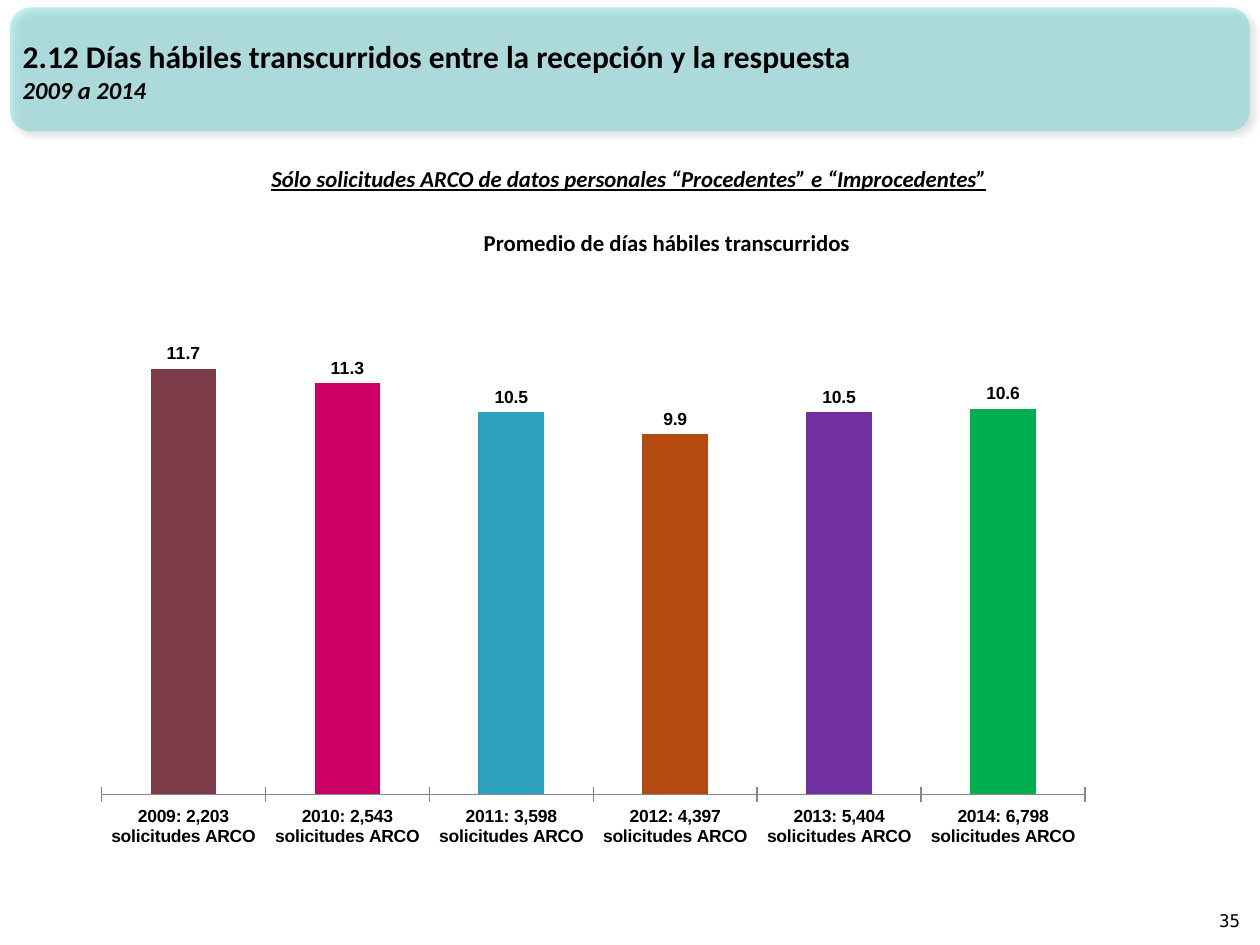
from dataclasses import dataclass

from lxml import etree
from pptx import Presentation
from pptx.chart.data import CategoryChartData
from pptx.dml.color import RGBColor
from pptx.enum.chart import XL_CHART_TYPE, XL_LABEL_POSITION, XL_TICK_LABEL_POSITION, XL_TICK_MARK
from pptx.enum.shapes import MSO_SHAPE
from pptx.enum.text import MSO_ANCHOR, PP_ALIGN
from pptx.oxml import parse_xml
from pptx.oxml.ns import nsdecls, qn
from pptx.util import Inches, Pt

COLUMN_CLUSTERED = XL_CHART_TYPE.COLUMN_CLUSTERED
OUTSIDE_END = XL_LABEL_POSITION.OUTSIDE_END
LOW_LABELS = XL_TICK_LABEL_POSITION.LOW
TICK_CROSS, TICK_NONE = XL_TICK_MARK.CROSS, XL_TICK_MARK.NONE
ROUNDED = MSO_SHAPE.ROUNDED_RECTANGLE
TOP, MIDDLE, BOTTOM = MSO_ANCHOR.TOP, MSO_ANCHOR.MIDDLE, MSO_ANCHOR.BOTTOM
LEFT, CENTER, RIGHT = PP_ALIGN.LEFT, PP_ALIGN.CENTER, PP_ALIGN.RIGHT

BLACK = RGBColor(0x00, 0x00, 0x00)
TEAL = RGBColor(0x33, 0xCC, 0xCC)
AXIS_GRAY = RGBColor(0x86, 0x86, 0x86)
BLUE = RGBColor(0x2D, 0xA2, 0xBF)

SLIDE_WIDTH, SLIDE_HEIGHT = Inches(10), Inches(7.5)
TITLE_LAYOUT = 5


@dataclass(frozen=True)
class Area:
    left: float
    top: float
    width: float
    height: float

    def box(self) -> tuple[int, int, int, int]:
        return (int(self.left * SLIDE_WIDTH), int(self.top * SLIDE_HEIGHT),
                int(self.width * SLIDE_WIDTH), int(self.height * SLIDE_HEIGHT))


@dataclass(frozen=True)
class Line:
    text: str
    size: float
    font: str = "Calibri"
    bold: bool = True
    italic: bool = False
    underline: bool = False


@dataclass(frozen=True)
class Year:
    year: int
    requests: int
    days: float
    color: RGBColor

    def label(self) -> str:
        return f"{self.year}: {self.requests:,} solicitudes ARCO"


@dataclass(frozen=True)
class Caption:
    area: Area
    line: Line
    align: PP_ALIGN = CENTER
    anchor: MSO_ANCHOR = TOP


YEARS = [
    Year(2009, 2203, 11.7, RGBColor(0x7D, 0x3C, 0x4A)),
    Year(2010, 2543, 11.3, RGBColor(0xCC, 0x00, 0x66)),
    Year(2011, 3598, 10.5, BLUE),
    Year(2012, 4397, 9.9, RGBColor(0xB5, 0x4A, 0x10)),
    Year(2013, 5404, 10.5, RGBColor(0x70, 0x30, 0xA0)),
    Year(2014, 6798, 10.6, RGBColor(0x00, 0xB0, 0x50)),
]
HEADING = [
    Line("2.12 Días hábiles transcurridos entre la recepción y la respuesta", 18),
    Line("2009 a 2014", 14, italic=True),
]
CAPTIONS = [
    Caption(Area(0.343, 0.235, 0.372, 0.043), Line("Promedio de días hábiles transcurridos", 13)),
    Caption(Area(0.152, 0.168, 0.694, 0.043),
            Line("Sólo solicitudes ARCO de datos personales “Procedentes” e “Improcedentes”",
                 13, italic=True, underline=True)),
    Caption(Area(0.954, 0.939, 0.04, 0.053), Line("35", 10, "DejaVu Sans Mono", bold=False),
            RIGHT, BOTTOM),
]
BANNER_AREA = Area(0.008, 0.008, 0.984, 0.131)
HEADING_AREA = Area(0.008, 0.012, 0.917, 0.125)
CHART_AREA = Area(0.078, 0.303, 0.844, 0.604)
PLOT_AREA = Area(0.003, 0.125, 0.925, 0.765)


def write_lines(frame, lines: list[Line], align: PP_ALIGN, anchor: MSO_ANCHOR) -> None:
    frame.word_wrap = True
    frame.vertical_anchor = anchor
    for index, line in enumerate(lines):
        paragraph = frame.add_paragraph() if index else frame.paragraphs[0]
        paragraph.alignment = align
        run = paragraph.add_run()
        run.text = line.text
        font = run.font
        font.name, font.size = line.font, Pt(line.size)
        font.bold, font.italic, font.underline = line.bold, line.italic, line.underline
        font.color.rgb = BLACK


def draw_banner(slide) -> None:
    banner = slide.shapes.add_shape(ROUNDED, *BANNER_AREA.box())
    banner.fill.solid()
    banner.fill.fore_color.rgb = TEAL
    banner.line.fill.background()
    properties = banner.element.spPr
    color = properties.find(qn("a:solidFill"))[0]
    etree.SubElement(color, qn("a:alpha"), val="30000")
    properties.append(parse_xml(
        f'<a:effectLst {nsdecls("a")}><a:outerShdw blurRad="{Pt(4)}" dist="{Pt(3)}" '
        'dir="2700000" algn="tl" rotWithShape="0"><a:srgbClr val="000000">'
        '<a:alpha val="40000"/></a:srgbClr></a:outerShdw></a:effectLst>'))
    slide.shapes.element.insert(2, banner.element)


def draw_heading(slide) -> None:
    heading = slide.shapes.title
    heading.left, heading.top, heading.width, heading.height = HEADING_AREA.box()
    write_lines(heading.text_frame, HEADING, LEFT, MIDDLE)


def draw_caption(slide, caption: Caption) -> None:
    frame = slide.shapes.add_textbox(*caption.area.box()).text_frame
    write_lines(frame, [caption.line], caption.align, caption.anchor)


def fix_plot_area(chart, area: Area) -> None:
    plot_area = chart.element.chart.plotArea
    for layout in plot_area.findall(qn("c:layout")):
        plot_area.remove(layout)
    settings = [("layoutTarget", "inner"), ("xMode", "edge"), ("yMode", "edge"),
                ("x", area.left), ("y", area.top), ("w", area.width), ("h", area.height)]
    layout = etree.Element(qn("c:layout"))
    manual = etree.SubElement(layout, qn("c:manualLayout"))
    for tag, value in settings:
        etree.SubElement(manual, qn(f"c:{tag}"), val=str(value))
    plot_area.insert(0, layout)


def draw_days_chart(slide) -> None:
    data = CategoryChartData(number_format="0.0")
    data.categories = [year.label() for year in YEARS]
    data.add_series("Series 1", [year.days for year in YEARS])
    chart = slide.shapes.add_chart(COLUMN_CLUSTERED, *CHART_AREA.box(), data).chart
    chart.has_legend = chart.has_title = False
    chart.font.name, chart.font.size, chart.font.bold = "Arial", Pt(10), True
    chart.font.color.rgb = BLACK

    days_axis = chart.value_axis
    days_axis.minimum_scale, days_axis.maximum_scale = 0, 12
    days_axis.has_major_gridlines = False
    days_axis.visible = False
    year_axis = chart.category_axis
    year_axis.major_tick_mark, year_axis.minor_tick_mark = TICK_CROSS, TICK_NONE
    year_axis.tick_label_position = LOW_LABELS
    year_axis.format.line.color.rgb = AXIS_GRAY

    plot = chart.plots[0]
    plot.gap_width, plot.overlap, plot.vary_by_categories = 150, -25, False
    plot.has_data_labels = True
    labels = plot.data_labels
    labels.show_value = True
    labels.number_format, labels.number_format_is_linked = "0.0", False
    labels.position = OUTSIDE_END
    days = plot.series[0]
    days.format.fill.solid()
    days.format.fill.fore_color.rgb = BLUE
    for index, year in enumerate(YEARS):
        fill = days.points[index].format.fill
        fill.solid()
        fill.fore_color.rgb = year.color
    fix_plot_area(chart, PLOT_AREA)


def main() -> None:
    presentation = Presentation()
    presentation.slide_width, presentation.slide_height = SLIDE_WIDTH, SLIDE_HEIGHT
    slide = presentation.slides.add_slide(presentation.slide_layouts[TITLE_LAYOUT])
    draw_banner(slide)
    draw_heading(slide)
    for caption in CAPTIONS:
        draw_caption(slide, caption)
    draw_days_chart(slide)
    presentation.save("out.pptx")


if __name__ == "__main__":
    main()
